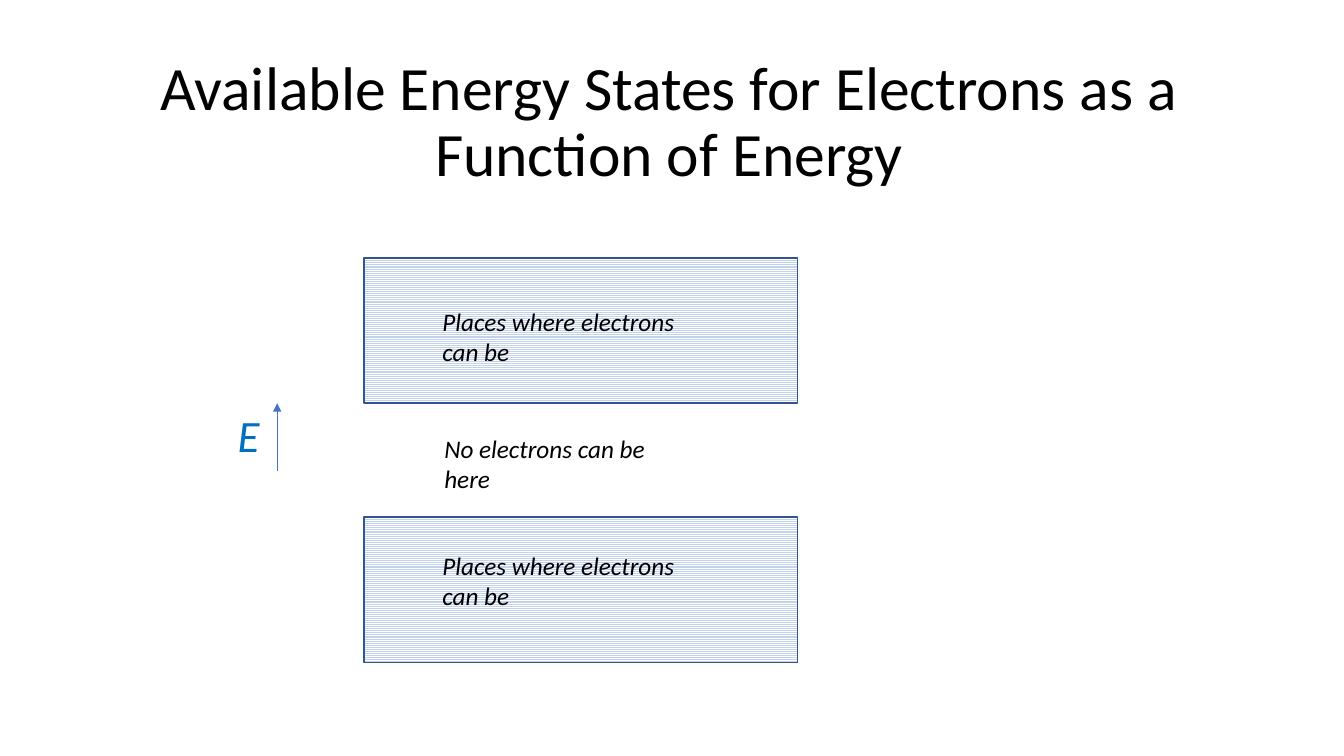
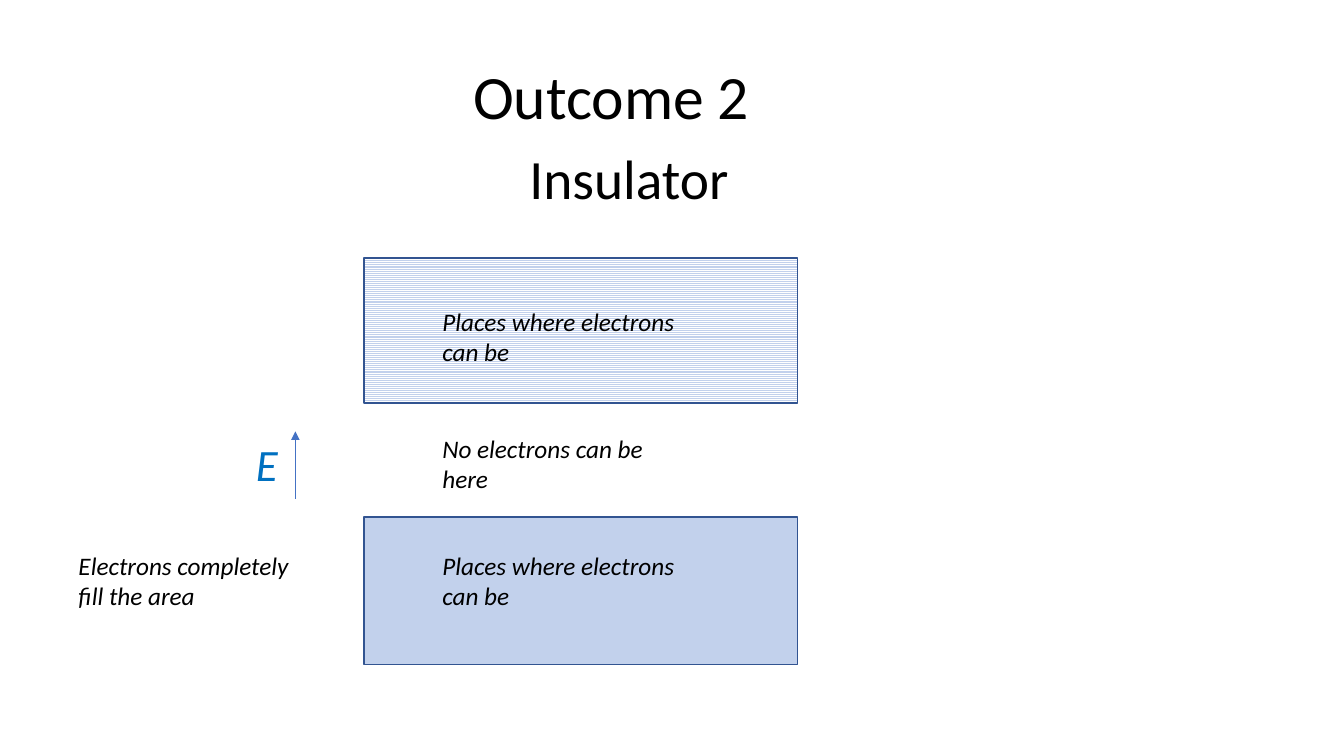
"""Build two slides on the energy states that electrons can occupy."""
from dataclasses import dataclass

from lxml import etree
from pptx import Presentation
from pptx.dml.color import RGBColor
from pptx.enum import dml, shapes, text
from pptx.oxml import ns
from pptx.util import Pt


@dataclass(frozen=True)
class Theme:
    font: str = "Calibri"
    ink: RGBColor = RGBColor(0, 0, 0)
    paper: RGBColor = RGBColor(255, 255, 255)
    band: RGBColor = RGBColor(0xC2, 0xD1, 0xEC)
    edge: RGBColor = RGBColor(0x32, 0x54, 0x91)
    arrow: RGBColor = RGBColor(0x44, 0x72, 0xC4)
    energy: RGBColor = RGBColor(0, 0x70, 0xC0)
    title: float = 44
    subtitle: float = 39.6
    symbol: float = 32
    caption: float = 18


THEME = Theme()
ALLOWED = "Places where electrons can be"
FORBIDDEN = "No electrons can be here"
BAND_LEFT, BAND_WIDTH, BAND_HEIGHT = 260, 309.6, 103.7
UPPER_TOP, LOWER_TOP = 184.3, 369.4
CAPTION_LEFT, CAPTION_WIDTH, CAPTION_HEIGHT = 308.9, 189.4, 51.1
UPPER_CAPTION, GAP_CAPTION, LOWER_CAPTION = 215.3, 305.6, 389.5

SLIDES = [
    {
        "titles": [("Available Energy States for Electrons as a Function of Energy",
                    THEME.title, (26.6, 36, 902.9, 104.4))],
        "lower_band": (BAND_HEIGHT, False),
        "gap_caption": (310.3, 306),
        "side_captions": [],
        "energy_axis": (162.7, 288),
    },
    {
        "titles": [("Outcome 2", THEME.title, (26.6, 36, 820.1, 69.8)),
                   ("Insulator", THEME.subtitle, (35.3, 104.4, 828, 51.1))],
        "lower_band": (105.1, True),
        "gap_caption": (CAPTION_LEFT, GAP_CAPTION),
        "side_captions": [("Electrons completely fill the area", 49, LOWER_CAPTION, 168.5)],
        "energy_axis": (175.7, 308.2),
    },
]


def add_text(parent, words, place, size, color=THEME.ink, italic=True):
    box = parent.add_textbox(*map(Pt, place))
    frame = box.text_frame
    frame.word_wrap = True
    para = frame.paragraphs[0]
    span = para.add_run()
    span.text = words
    span.font.name = THEME.font
    span.font.size = Pt(size)
    span.font.italic = italic
    span.font.color.rgb = color
    return frame


def add_title(parent, words, size, place):
    frame = add_text(parent, words, place, size, italic=False)
    frame.vertical_anchor = text.MSO_ANCHOR.MIDDLE
    para = frame.paragraphs[0]
    para.alignment = text.PP_ALIGN.CENTER
    para.line_spacing = 0.9


def add_caption(parent, words, left, top, width=CAPTION_WIDTH):
    frame = add_text(parent, words, (left, top, width, CAPTION_HEIGHT), THEME.caption)
    frame.auto_size = text.MSO_AUTO_SIZE.SHAPE_TO_FIT_TEXT


def add_band(parent, top, height=BAND_HEIGHT, filled=False):
    band = parent.add_shape(shapes.MSO_SHAPE.RECTANGLE,
                            *map(Pt, (BAND_LEFT, top, BAND_WIDTH, height)))
    band.shadow.inherit = False
    if filled:
        band.fill.solid()
    else:
        band.fill.patterned()
        band.fill.pattern = dml.MSO_PATTERN.NARROW_HORIZONTAL
        band.fill.back_color.rgb = THEME.paper
    band.fill.fore_color.rgb = THEME.band
    band.line.color.rgb = THEME.edge
    band.line.width = Pt(1)


def add_energy_axis(parent, left, top):
    group = parent.add_group_shape().shapes
    frame = add_text(group, "E", (left, top, 42.5, 46.1), THEME.symbol, THEME.energy)
    frame.auto_size = text.MSO_AUTO_SIZE.SHAPE_TO_FIT_TEXT
    x = left + 35.3
    arrow = group.add_connector(shapes.MSO_CONNECTOR.STRAIGHT,
                                *map(Pt, (x, top + 48.2, x, top)))
    arrow.line.color.rgb = THEME.arrow
    arrow.line.width = Pt(1)
    properties = arrow.element.spPr
    etree.SubElement(arrow.line._get_or_add_ln(), ns.qn("a:tailEnd"), type="triangle")
    etree.SubElement(properties, ns.qn("a:effectLst"))


def build_slide(deck, content):
    page = deck.slides.add_slide(deck.slide_layouts[6]).shapes
    add_band(page, LOWER_TOP, *content["lower_band"])
    add_band(page, UPPER_TOP)
    add_caption(page, ALLOWED, CAPTION_LEFT, UPPER_CAPTION)
    add_caption(page, FORBIDDEN, *content["gap_caption"])
    add_caption(page, ALLOWED, CAPTION_LEFT, LOWER_CAPTION)
    for caption in content["side_captions"]:
        add_caption(page, *caption)
    for title in content["titles"]:
        add_title(page, *title)
    add_energy_axis(page, *content["energy_axis"])


def main():
    deck = Presentation()
    deck.slide_width, deck.slide_height = Pt(960), Pt(540)
    for content in SLIDES:
        build_slide(deck, content)
    deck.save("out.pptx")


if __name__ == "__main__":
    main()
